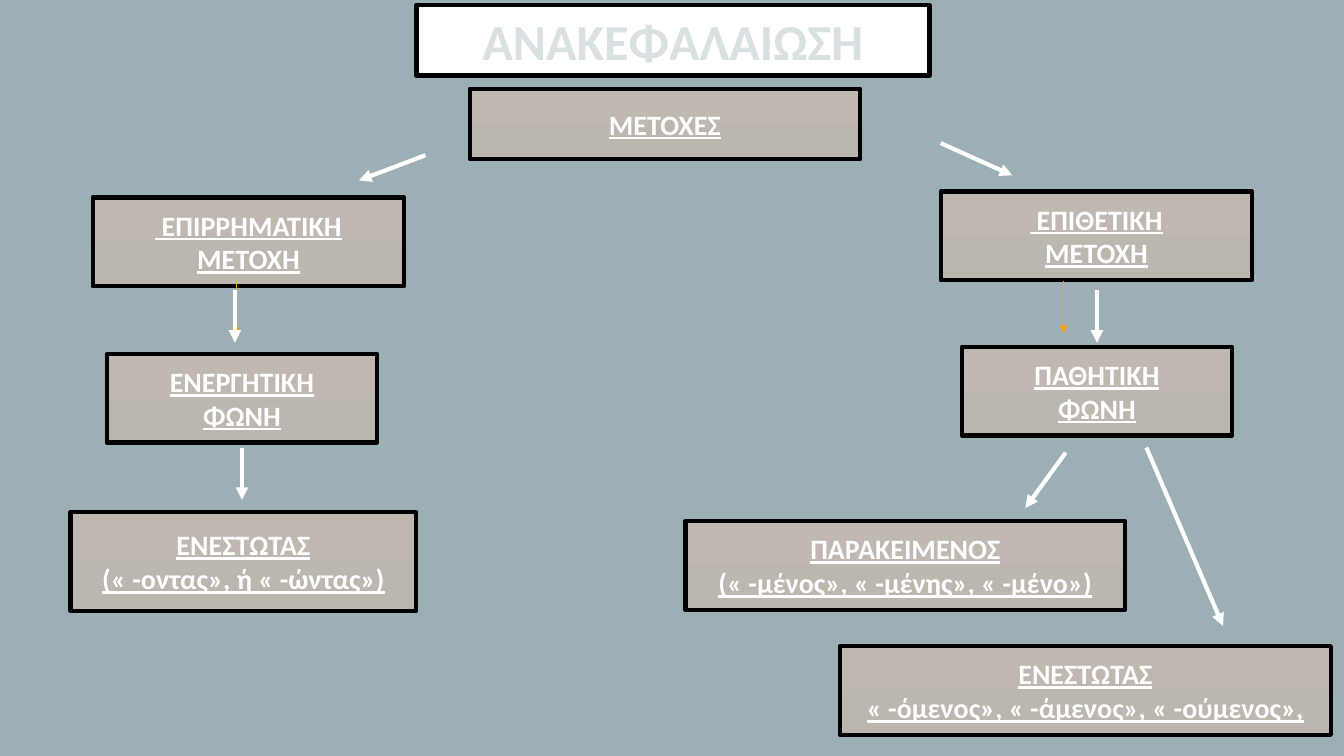
from dataclasses import dataclass

from lxml import etree
from pptx import Presentation, util as u
from pptx.dml import color
from pptx.enum import shapes, text
from pptx.oxml import ns

SCALE = 9144  # EMU per px, 100 px to the inch


@dataclass(frozen=True)
class Theme:
    back: str = "9BAFB5"
    white: str = "FFFFFF"
    black: str = "000000"
    top: str = "BEB8B1"
    base: str = "BBB6AE"
    pale: str = "D9E0E2"
    gold: str = "F6A21D"
    font: str = "Calibri"
    head: int = 36
    body: int = 20
    thick: float = 3
    thin: float = 0.5


THEME = Theme()


@dataclass(frozen=True)
class Box:
    left: int
    top: int
    width: int
    height: int
    lines: tuple[str, ...]
    title: bool = False


@dataclass(frozen=True)
class Arrow:
    x1: int
    y1: int
    x2: int
    y2: int
    tint: str = THEME.white
    weight: float = THEME.thick


BOXES = (
    Box(413, 5, 509, 70, ("ΑΝΑΚΕΦΑΛΑΙΩΣΗ",), title=True),
    Box(466, 88, 387, 70, ("ΜΕΤΟΧΕΣ",)),
    # Left branch
    Box(92, 196, 309, 88, (" ΕΠΙΡΡΗΜΑΤΙΚΗ", "ΜΕΤΟΧΗ")),
    Box(106, 351, 268, 88, ("ΕΝΕΡΓΗΤΙΚΗ", "ΦΩΝΗ")),
    Box(70, 508, 343, 98, ("ΕΝΕΣΤΩΤΑΣ", "(« -οντας», ή « -ώντας»)")),
    # Right branch
    Box(933, 190, 309, 88, (" ΕΠΙΘΕΤΙΚΗ", "ΜΕΤΟΧΗ")),
    Box(954, 344, 268, 88, ("ΠΑΘΗΤΙΚΗ", "ΦΩΝΗ")),
    Box(680, 517, 436, 88,
        ("ΠΑΡΑΚΕΙΜΕΝΟΣ", "(« -μένος», « -μένης», « -μένο»)")),
    Box(833, 641, 487, 88,
        ("ΕΝΕΣΤΩΤΑΣ", "« -όμενος», « -άμενος», « -ούμενος»,")),
)

ARROWS = (
    # Thin accents
    Arrow(234, 281, 234, 333, THEME.gold, THEME.thin),
    Arrow(1055, 279, 1055, 331, THEME.gold, THEME.thin),
    # From participles to their two kinds
    Arrow(422, 154, 356, 179),
    Arrow(933, 142, 1004, 174),
    # From kind to voice
    Arrow(233, 288, 233, 340),
    Arrow(1088, 288, 1088, 340),
    # From voice to tense
    Arrow(240, 444, 240, 496),
    Arrow(1057, 449, 1017, 504),
    Arrow(1137, 444, 1213, 621),
)


def px(size: int) -> u.Emu:
    return u.Emu(size * SCALE)


def rgb(code: str) -> color.RGBColor:
    return color.RGBColor.from_string(code)


def style(item: object, values: dict[str, object]) -> None:
    for name, value in values.items():
        setattr(item, name, value)


def paint(fill, title: bool) -> None:
    if title:
        fill.solid()
        fill.fore_color.rgb = rgb(THEME.white)
        return
    fill.gradient()
    fill.gradient_angle = 270
    for stop, code in zip(fill.gradient_stops, (THEME.top, THEME.base)):
        stop.color.rgb = rgb(code)


def draw_box(slide, box: Box) -> None:
    shape = slide.shapes.add_shape(
        shapes.MSO_SHAPE.RECTANGLE,
        *map(px, (box.left, box.top, box.width, box.height)))
    shape.shadow.inherit = False
    paint(shape.fill, box.title)
    shape.line.color.rgb = rgb(THEME.black)
    shape.line.width = u.Pt(THEME.thick)
    frame = shape.text_frame
    style(frame, {"word_wrap": True,
                  "vertical_anchor": text.MSO_ANCHOR.MIDDLE})
    for i, line in enumerate(box.lines):
        para = frame.add_paragraph() if i else frame.paragraphs[0]
        para.alignment = text.PP_ALIGN.CENTER
        run = para.add_run()
        run.text = line
        style(run.font, {
            "name": THEME.font,
            "size": u.Pt(THEME.head if box.title else THEME.body),
            "bold": True,
            "underline": not box.title,
        })
        run.font.color.rgb = rgb(THEME.pale if box.title else THEME.white)


def draw_arrow(slide, arrow: Arrow) -> None:
    link = slide.shapes.add_connector(
        shapes.MSO_CONNECTOR.STRAIGHT,
        *map(px, (arrow.x1, arrow.y1, arrow.x2, arrow.y2)))
    link.line.color.rgb = rgb(arrow.tint)
    link.line.width = u.Pt(arrow.weight)
    etree.SubElement(link.line._get_or_add_ln(), ns.qn("a:tailEnd"),
                     type="triangle")
    etree.SubElement(link._element.spPr, ns.qn("a:effectLst"))


def main() -> None:
    deck = Presentation()
    style(deck, {"slide_width": px(1333), "slide_height": px(750)})
    slide = deck.slides.add_slide(deck.slide_layouts[6])
    fill = slide.background.fill
    fill.solid()
    fill.fore_color.rgb = rgb(THEME.back)
    for box in BOXES:
        draw_box(slide, box)
    for arrow in ARROWS:
        draw_arrow(slide, arrow)
    deck.save("out.pptx")


if __name__ == "__main__":
    main()
